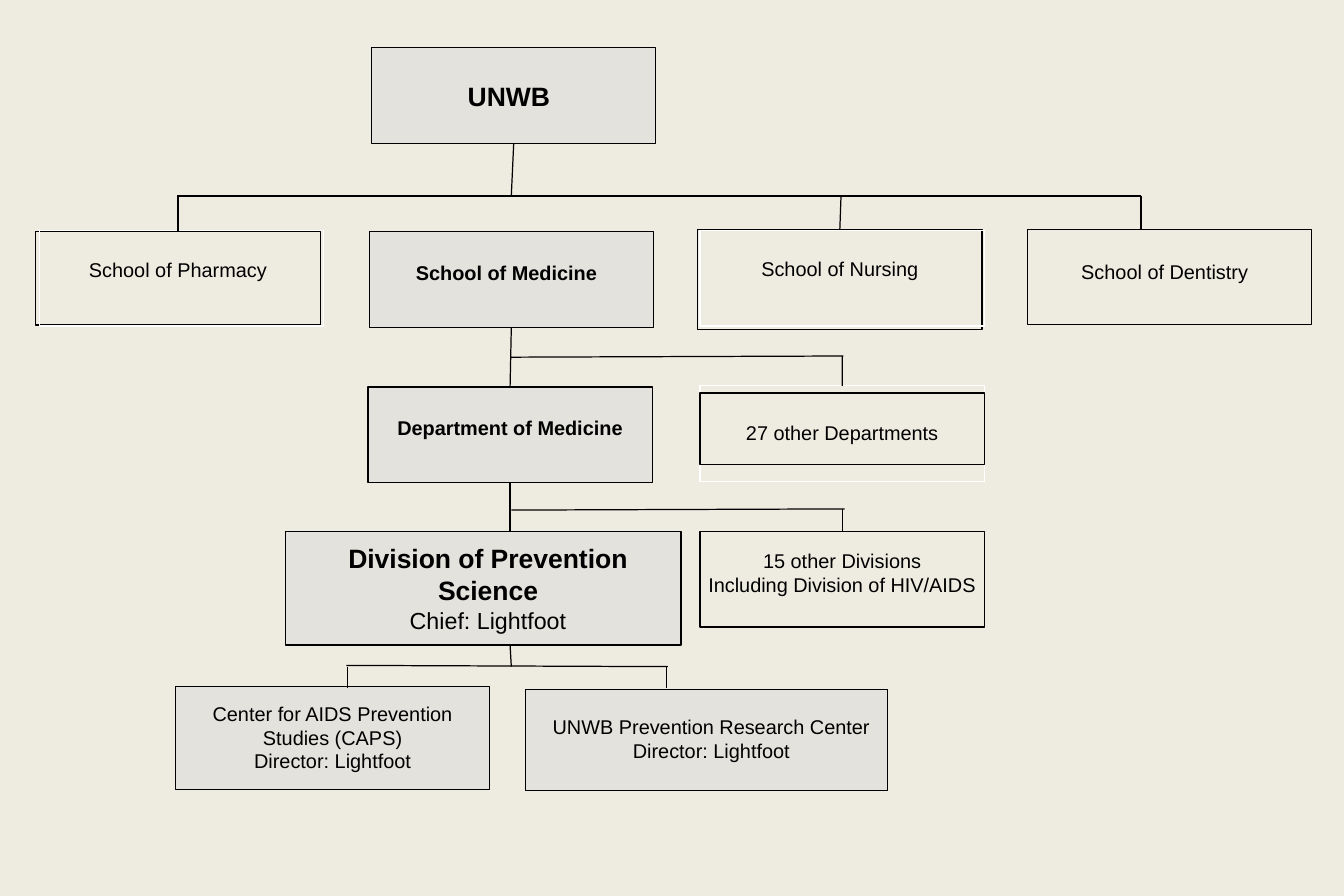
"""Build an organisation chart slide, from the university down to its research centers."""
import pptx
import pptx.dml.color
import pptx.enum.shapes
import pptx.enum.text
import pptx.util
import lxml.etree

Inches = pptx.util.Inches
BLACK = pptx.dml.color.RGBColor(0x00, 0x00, 0x00)
WHITE = pptx.dml.color.RGBColor(0xFF, 0xFF, 0xFF)
GREY = pptx.dml.color.RGBColor(0xD9, 0xD9, 0xD9)
CREAM = pptx.dml.color.RGBColor(0xEE, 0xEC, 0xE1)
DRAWING = "http://schemas.openxmlformats.org/drawingml/2006/main"
UNIVERSITY = "UNWB"
BOTTOM, TOP = 2, 0
BOX_WIDTH, BOX_HEIGHT = 2.38, 0.8
INSET = 0.06


def add_frame(slide, box, line=BLACK, shaded=False):
    left, top, width, height = box
    shape = slide.shapes.add_shape(
        pptx.enum.shapes.MSO_SHAPE.RECTANGLE,
        Inches(left), Inches(top), Inches(width), Inches(height))
    shape.shadow.inherit = False
    shape.line.color.rgb = line
    shape.line.width = pptx.util.Pt(0.75)
    if shaded:
        shape.fill.solid()
        shape.fill.fore_color.rgb = GREY
        color = shape._element.spPr.find(f"{{{DRAWING}}}solidFill/{{{DRAWING}}}srgbClr")
        lxml.etree.SubElement(color, f"{{{DRAWING}}}alpha", val="50000")
    else:
        shape.fill.background()
    return shape


def add_unit(slide, box, lines, text_top, shaded=False, shift=0):
    shape = add_frame(slide, box, shaded=shaded)
    frame = shape.text_frame
    frame.word_wrap = True
    frame.vertical_anchor = pptx.enum.text.MSO_ANCHOR.TOP
    frame.margin_left = Inches(INSET + max(0, 2 * shift))
    frame.margin_right = Inches(INSET + max(0, -2 * shift))
    frame.margin_top = Inches(text_top)
    frame.margin_bottom = Inches(0.03)
    for index, (text, size, bold) in enumerate(lines):
        paragraph = frame.add_paragraph() if index else frame.paragraphs[0]
        paragraph.alignment = pptx.enum.text.PP_ALIGN.CENTER
        run = paragraph.add_run()
        run.text = text
        run.font.name = "Arial"
        run.font.size = pptx.util.Pt(size)
        run.font.bold = bold
        run.font.color.rgb = BLACK
    return shape


def add_line(slide, start, end, upper=None, lower=None):
    connector = slide.shapes.add_connector(
        pptx.enum.shapes.MSO_CONNECTOR.STRAIGHT,
        *(Inches(value) for value in (*start, *end)))
    if upper is not None:
        connector.begin_connect(upper, BOTTOM)
    if lower is not None:
        connector.end_connect(lower, TOP)
    connector.line.color.rgb = BLACK
    connector.line.width = pptx.util.Pt(0.75)
    lxml.etree.SubElement(connector._element.spPr, f"{{{DRAWING}}}effectLst")


def add_university(slide, left, top):
    university = add_unit(slide, (left, top, BOX_WIDTH, BOX_HEIGHT),
                          [(UNIVERSITY, 16, True)], 0.27, shaded=True, shift=-0.04)
    add_line(slide, (left + 1.19, top + 0.8), (left + 1.17, top + 1.24), upper=university)


def add_schools(slide, left, top):
    units = {}
    for name, x, y, height, text_top, shift in (
            ("Pharmacy", 0, 0.3, 0.78, 0.22, 0),
            ("Medicine", 2.79, 0.3, 0.8, 0.24, -0.04),
            ("Nursing", 5.54, 0.28, 0.84, 0.23, 0),
            ("Dentistry", 8.3, 0.28, 0.8, 0.25, -0.04)):
        main_school = name == "Medicine"
        units[name] = add_unit(
            slide, (left + x, top + y, BOX_WIDTH, height),
            [(f"School of {name}", 12, main_school)], text_top, main_school, shift)
    for x in (0.03, 5.56):
        add_frame(slide, (left + x, top + 0.29, BOX_WIDTH, BOX_HEIGHT), WHITE)
    add_line(slide, (left + 1.18, top), (left + 9.25, top))
    for x, school in ((1.19, units["Pharmacy"]), (6.74, units["Nursing"]), (9.25, None)):
        add_line(slide, (left + x, top), (left + x, top + 0.28), lower=school)
    return units["Medicine"]


def add_departments(slide, left, top, school):
    other = add_frame(slide, (left + 2.78, top, BOX_WIDTH, BOX_HEIGHT), WHITE)
    department = add_unit(slide, (left, top + 0.01, BOX_WIDTH, BOX_HEIGHT),
                          [("Department of Medicine", 12, True)], 0.24, shaded=True)
    add_unit(slide, (left + 2.78, top + 0.06, BOX_WIDTH, 0.6),
             [("27 other Departments", 12, False)], 0.23)
    add_line(slide, (left + 1.2, top - 0.5), (left + 1.19, top), school, department)
    add_line(slide, (left + 1.19, top - 0.24), (left + 3.98, top - 0.25))
    add_line(slide, (left + 3.97, top - 0.25), (left + 3.97, top), lower=other)
    return department


def add_divisions(slide, left, top, department):
    add_unit(slide, (left, top, 3.31, 0.95),
             [("Division of Prevention Science", 16, True), ("Chief: Lightfoot", 14, False)],
             0.09, shaded=True, shift=0.04)
    other = add_unit(slide, (left + 3.47, top, BOX_WIDTH, BOX_HEIGHT),
                     [("15 other Divisions", 12, False),
                      ("Including Division of HIV/AIDS", 12, False)], 0.14)
    add_line(slide, (left + 1.88, top - 0.41), (left + 1.88, top), upper=department)
    add_line(slide, (left + 1.89, top - 0.18), (left + 4.68, top - 0.19))
    add_line(slide, (left + 4.66, top - 0.19), (left + 4.66, top), lower=other)


def add_centers(slide, left, top):
    for name, x, y, width, height, text_top, shift in (
            ("Center for AIDS Prevention Studies (CAPS)", 0, 0, 2.63, 0.86, 0.12, 0),
            (f"{UNIVERSITY} Prevention Research Center",
             2.93, 0.02, 3.03, 0.85, 0.21, 0.04)):
        add_unit(slide, (left + x, top + y, width, height),
                 [(name, 12, False), ("Director: Lightfoot", 12, False)],
                 text_top, shaded=True, shift=shift)
    add_line(slide, (left + 2.8, top - 0.35), (left + 2.81, top - 0.17))
    add_line(slide, (left + 1.43, top - 0.18), (left + 4.12, top - 0.17))
    for x in (1.44, 4.11):
        add_line(slide, (left + x, top - 0.17), (left + x, top + 0.01))


def main():
    presentation = pptx.Presentation()
    presentation.slide_width = Inches(11.25)
    presentation.slide_height = Inches(7.5)
    slide = presentation.slides.add_slide(presentation.slide_layouts[6])
    slide.background.fill.solid()
    slide.background.fill.fore_color.rgb = CREAM
    add_university(slide, 3.11, 0.4)
    school = add_schools(slide, 0.3, 1.64)
    department = add_departments(slide, 3.08, 3.23, school)
    add_divisions(slide, 2.39, 4.45, department)
    add_centers(slide, 1.47, 5.75)
    presentation.save("out.pptx")


if __name__ == "__main__":
    main()
